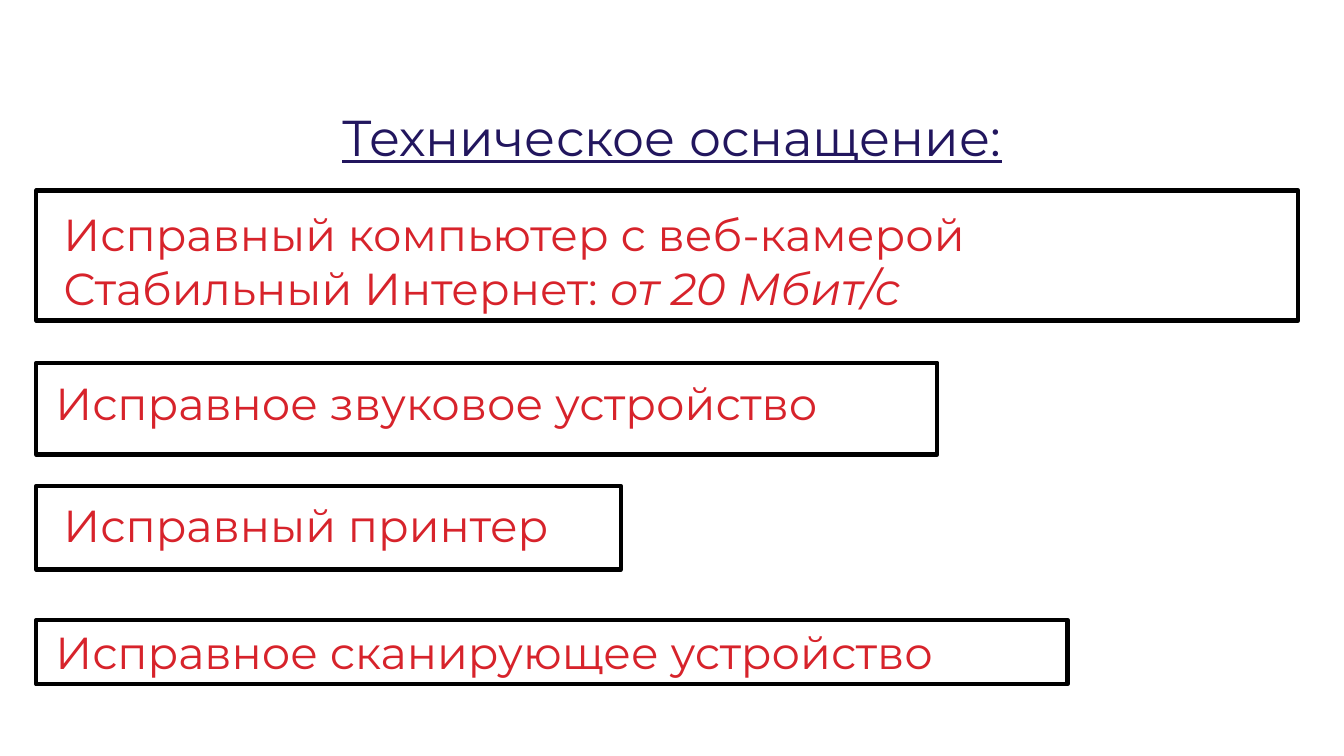
from dataclasses import dataclass

from pptx import Presentation
from pptx.dml.color import RGBColor
from pptx.enum.shapes import MSO_SHAPE
from pptx.enum.text import MSO_ANCHOR, MSO_AUTO_SIZE, PP_ALIGN
from pptx.slide import Slide
from pptx.text.text import TextFrame, _Paragraph
from pptx.util import Inches, Pt

RECT = MSO_SHAPE.RECTANGLE
TOP = MSO_ANCHOR.TOP
FIXED = MSO_AUTO_SIZE.NONE
LEFT = PP_ALIGN.LEFT
CENTER = PP_ALIGN.CENTER

WHITE = RGBColor(0xFF, 0xFF, 0xFF)
BLACK = RGBColor(0x00, 0x00, 0x00)
NAVY = RGBColor(0x22, 0x16, 0x5E)
RED = RGBColor(0xD7, 0x23, 0x2B)

FONT = "Montserrat"
WIDTH = Inches(13.33)
HEIGHT = Inches(7.5)
COLS = 100
ROWS = 100
EDGE = 2.7


@dataclass(frozen=True)
class Area:
    col: float
    row: float
    wide: float
    high: float

    def place(self) -> tuple[int, int, int, int]:
        return (
            round(self.col * WIDTH / COLS),
            round(self.row * HEIGHT / ROWS),
            round(self.wide * WIDTH / COLS),
            round(self.high * HEIGHT / ROWS),
        )


@dataclass(frozen=True)
class Part:
    text: str
    slant: bool = False


@dataclass(frozen=True)
class Item:
    frame: Area
    label: Area
    lines: tuple[tuple[Part, ...], ...]


ITEMS = (
    Item(
        Area(EDGE, 25.2, 93.9, 17.2),
        Area(3.98, 26.67, 93.9, 15.73),
        (
            (Part("Исправный компьютер с веб-камерой"),),
            (Part("Стабильный Интернет: "), Part("от 20 Мбит/с", True)),
        ),
    ),
    Item(
        Area(EDGE, 48, 67.05, 12.13),
        Area(3.38, 49.07, 92.63, 8.53),
        ((Part("Исправное звуковое устройство"),),),
    ),
    Item(
        Area(EDGE, 64.27, 43.5, 11.07),
        Area(3.98, 65.2, 92.63, 8.53),
        ((Part("Исправный принтер"),),),
    ),
    Item(
        Area(EDGE, 82, 76.73, 8.53),
        Area(3.38, 82, 92.63, 8.53),
        ((Part("Исправное сканирующее устройство"),),),
    ),
)


def set_frame(body: TextFrame) -> None:
    body.word_wrap = True
    body.auto_size = FIXED
    body.vertical_anchor = TOP


def add_run(para: _Paragraph, part: Part, size: int, color: RGBColor) -> None:
    run = para.add_run()
    run.text = part.text
    run.font.name = FONT
    run.font.size = Pt(size)
    run.font.color.rgb = color
    if part.slant:
        run.font.italic = True


def draw_title(slide: Slide, area: Area, text: str) -> None:
    title = slide.shapes.title
    title.left, title.top, title.width, title.height = area.place()
    title.fill.solid()
    title.fill.fore_color.rgb = WHITE
    set_frame(title.text_frame)
    para = title.text_frame.paragraphs[0]
    para.alignment = CENTER
    para.line_spacing = 1.07
    para.space_after = Pt(10)
    add_run(para, Part(text), 36, NAVY)
    para.runs[0].font.underline = True


def draw_item(slide: Slide, item: Item) -> None:
    box = slide.shapes.add_shape(RECT, *item.frame.place())
    box.shadow.inherit = False
    box.fill.background()
    box.line.color.rgb = BLACK
    box.line.width = Pt(3)

    body = slide.shapes.add_textbox(*item.label.place()).text_frame
    set_frame(body)
    for rank, parts in enumerate(item.lines):
        para = body.add_paragraph() if rank else body.paragraphs[0]
        para.alignment = LEFT
        for part in parts:
            add_run(para, part, 32, RED)


def main() -> None:
    deck = Presentation()
    deck.slide_width = WIDTH
    deck.slide_height = HEIGHT
    slide = deck.slides.add_slide(deck.slide_layouts.get_by_name("Title Only"))
    slide.background.fill.solid()
    slide.background.fill.fore_color.rgb = WHITE
    draw_title(slide, Area(3.38, 12.8, 93.23, 19.87), "Техническое оснащение:")
    for item in ITEMS:
        draw_item(slide, item)
    deck.save("out.pptx")


if __name__ == "__main__":
    main()
